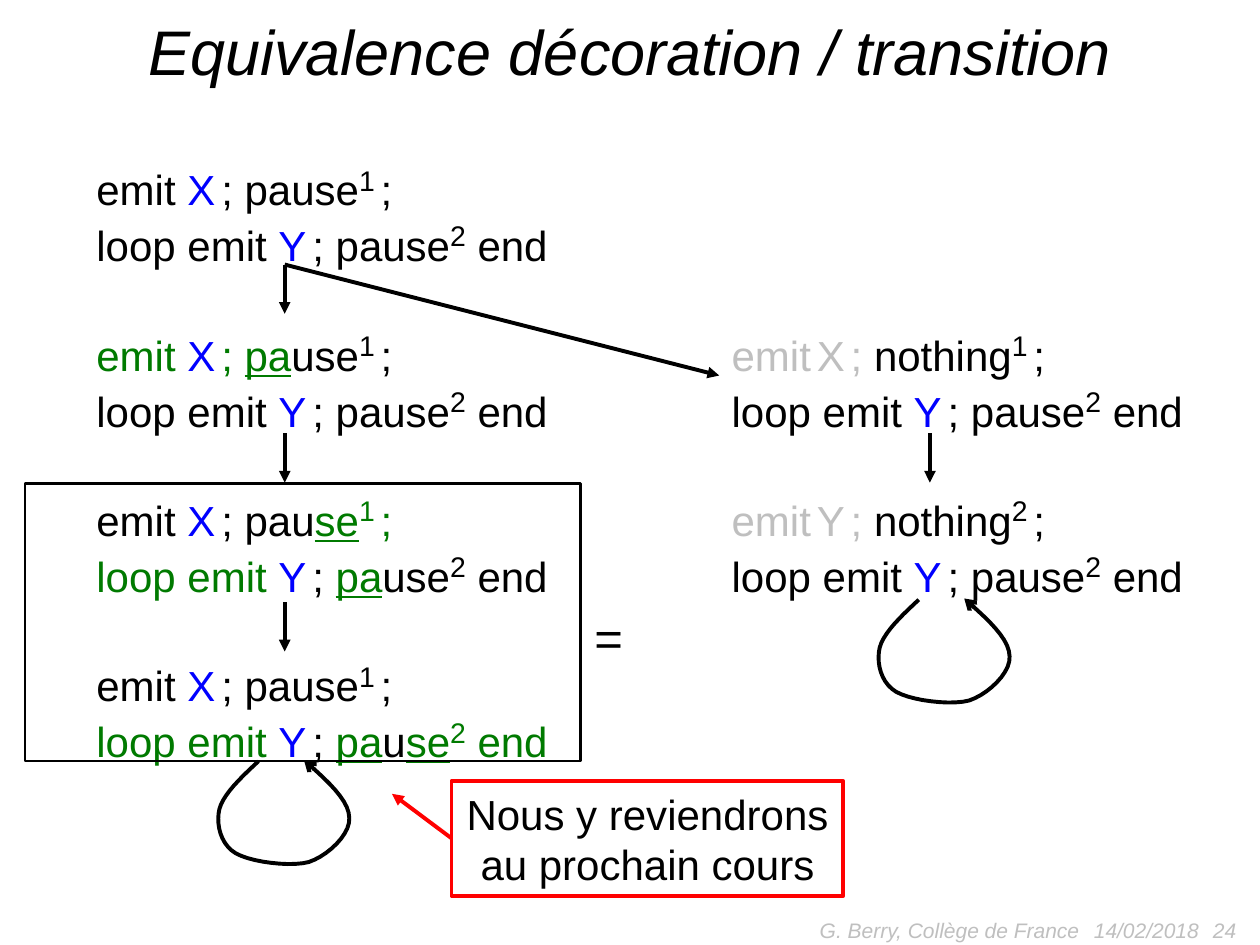
import dataclasses
import typing

import lxml.etree
import pptx
import pptx.dml.color
import pptx.enum.shapes
import pptx.enum.text
import pptx.oxml.ns
import pptx.util

Pt = pptx.util.Pt
Align = pptx.enum.text.PP_ALIGN
Anchor = pptx.enum.text.MSO_ANCHOR


@dataclasses.dataclass(frozen=True)
class Theme:
    font: str = "Arial"
    ink: str = "000000"
    signal: str = "0000FF"
    active: str = "007A00"
    faded: str = "BFBFBF"
    alert: str = "FF0000"
    title: float = 36
    code: float = 24
    index: float = 28
    small: float = 12
    stroke: float = 2.25
    frame: float = 1.5


THEME = Theme()


class Span(typing.NamedTuple):
    text: str
    color: str = THEME.ink
    size: float = THEME.code
    underline: bool = False
    raised: bool = False


class Box(typing.NamedTuple):
    left: float
    top: float
    width: float
    height: float


class Label(typing.NamedTuple):
    box: Box
    text: str
    size: float
    color: str = THEME.ink
    align: Align = Align.LEFT
    italic: bool = False
    anchor: Anchor = Anchor.TOP
    wrap: bool = True
    spacing: float = 1.0


class Program(typing.NamedTuple):
    column: int
    row: int
    lines: list[list[Span]]


class Arrow(typing.NamedTuple):
    start: tuple[float, float]
    end: tuple[float, float]
    color: str = THEME.ink


def rgb(color: str) -> pptx.dml.color.RGBColor:
    return pptx.dml.color.RGBColor.from_string(color)


def add_head(line: pptx.dml.line.LineFormat, kind: str) -> None:
    outline = line._get_or_add_ln()
    lxml.etree.SubElement(outline, pptx.oxml.ns.qn("a:tailEnd"), type=kind)


def set_line(line: pptx.dml.line.LineFormat, color: str, width: float) -> None:
    line.color.rgb = rgb(color)
    line.width = Pt(width)


def write_label(frame: pptx.text.text.TextFrame, label: Label) -> None:
    frame.word_wrap = label.wrap
    frame.vertical_anchor = label.anchor
    for number, text in enumerate(label.text.split("\n")):
        para = frame.add_paragraph() if number else frame.paragraphs[0]
        para.alignment = label.align
        para.line_spacing = label.spacing
        para.font.name = THEME.font
        para.font.size = Pt(label.size)
        para.font.italic = label.italic
        para.font.color.rgb = rgb(label.color)
        para.add_run().text = text


def draw_label(slide: pptx.slide.Slide, label: Label) -> None:
    box = slide.shapes.add_textbox(*map(Pt, label.box))
    write_label(box.text_frame, label)


def draw_program(slide: pptx.slide.Slide, program: Program) -> None:
    left, top = 48 + 363 * program.column, 88.5 + 94.5 * program.row
    frame = slide.shapes.add_textbox(Pt(left), Pt(top), Pt(276), Pt(62.5)).text_frame
    frame.word_wrap = False
    for number, line in enumerate(program.lines):
        para = frame.add_paragraph() if number else frame.paragraphs[0]
        para.line_spacing = 0.95
        para.font.name = THEME.font
        for span in line:
            run = para.add_run()
            run.text = span.text
            run.font.size = Pt(span.size)
            run.font.color.rgb = rgb(span.color)
            if span.underline:
                run.font.underline = True
            if span.raised:
                run._r.get_or_add_rPr().set("baseline", "30000")


def draw_arrow(slide: pptx.slide.Slide, arrow: Arrow) -> None:
    straight = pptx.enum.shapes.MSO_CONNECTOR.STRAIGHT
    connector = slide.shapes.add_connector(straight, *map(Pt, arrow.start + arrow.end))
    set_line(connector.line, arrow.color, THEME.stroke)
    add_head(connector.line, "triangle")
    lxml.etree.SubElement(connector._element.spPr, pptx.oxml.ns.qn("a:effectLst"))


def draw_frame(slide: pptx.slide.Slide, box: Box, color: str, width: float) -> pptx.shapes.autoshape.Shape:
    rectangle = pptx.enum.shapes.MSO_SHAPE.RECTANGLE
    shape = slide.shapes.add_shape(rectangle, *map(Pt, box))
    shape.shadow.inherit = False
    shape.fill.background()
    set_line(shape.line, color, width)
    return shape


LOOP_CURVE = [
    (23, 0.7), (13, 10), (3, 19.5), (0.7, 28), (-1.4, 36.7), (1.4, 48.2), (10, 53.3),
    (18.7, 58.3), (41, 61.2), (51.8, 58.3), (62.6, 54.7), (75.6, 42.5), (74.9, 33.1),
    (74.9, 23), (62, 11.5), (49, 0),
]


def curve_points(controls: list[tuple[float, float]], steps: int = 10) -> list[tuple[float, float]]:
    points = [controls[0]]
    for first in range(0, len(controls) - 1, 3):
        piece = controls[first:first + 4]
        for step in range(1, steps + 1):
            t = step / steps
            weights = ((1 - t) ** 3, 3 * t * (1 - t) ** 2, 3 * t ** 2 * (1 - t), t ** 3)
            x, y = (sum(w * p[axis] for w, p in zip(weights, piece)) for axis in (0, 1))
            points.append((x, y))
    return points


def draw_loop(slide: pptx.slide.Slide, left: float, top: float) -> None:
    points = [(Pt(left + x), Pt(top + y)) for x, y in curve_points(LOOP_CURVE)]
    builder = slide.shapes.build_freeform(*points[0])
    builder.add_line_segments(points[1:], close=False)
    shape = builder.convert_to_shape()
    shape.shadow.inherit = False
    shape.fill.background()
    set_line(shape.line, THEME.ink, THEME.stroke)
    add_head(shape.line, "arrow")


def marked(text: str) -> Span:
    return Span(text, THEME.active, underline=True)


def index(digit: str, color: str = THEME.ink) -> Span:
    return Span(digit, color, THEME.index, raised=True)


def emit(name: str, color: str = THEME.ink) -> list[Span]:
    return [Span("emit ", color), Span(name, THEME.signal), GAP]


def loop(color: str = THEME.ink) -> list[Span]:
    return [Span("loop ", color), Span("emit ", color), Span("Y", THEME.signal), GAP]


def faded_emit(name: str, digit: str) -> list[Span]:
    gap = GAP._replace(color=THEME.faded)
    before = [Span("emit", THEME.faded), gap, Span(name, THEME.faded), gap, Span("; ", THEME.faded)]
    return before + [Span("nothing"), index(digit)] + END


GAP = Span(" ", size=THEME.small)
END = [GAP, Span(";")]
PLAIN_EMIT = emit("X") + [Span("; pause"), index("1")] + END
PLAIN_LOOP = loop() + [Span("; pause"), index("2"), Span(" end")]
PROGRAMS = [
    Program(0, 0, [PLAIN_EMIT, PLAIN_LOOP]),
    Program(0, 1, [emit("X", THEME.active) + [Span("; ", THEME.active), marked("pa"), Span("use"), index("1")] + END,
                   PLAIN_LOOP]),
    Program(1, 1, [faded_emit("X", "1"), PLAIN_LOOP]),
    Program(0, 2, [emit("X") + [Span("; pau"), marked("se"), index("1", THEME.active), GAP, Span(";", THEME.active)],
                   loop(THEME.active) + [Span("; "), marked("pa"), Span("use"), index("2"), Span(" end")]]),
    Program(0, 3, [PLAIN_EMIT, loop(THEME.active) + [Span("; "), marked("pa"), Span("u"), marked("se"),
                                                     index("2", THEME.active), Span(" end", THEME.active)]]),
    Program(1, 2, [faded_emit("Y", "2"), PLAIN_LOOP]),
]
FOOTER = dict(size=THEME.small, color=THEME.faded, italic=True, anchor=Anchor.MIDDLE)
LABELS = [
    Label(Box(618, 517, 100, 29), "14/02/2018", **FOOTER),
    Label(Box(546, 517, 167.5, 29), "24", align=Align.RIGHT, **FOOTER),
    Label(Box(396, 517, 228, 29), "G. Berry, Collège de France", align=Align.RIGHT, **FOOTER),
    Label(Box(18, 3.6, 684, 51), "Equivalence décoration / transition", THEME.title, align=Align.CENTER, italic=True),
    Label(Box(332.6, 342, 31, 40), "=", THEME.index, wrap=False, spacing=1.05),
]
NOTE = Label(Box(258, 446.4, 224, 65.5), "Nous y reviendrons\nau prochain cours", THEME.code,
             align=Align.CENTER, anchor=Anchor.MIDDLE, wrap=False)
STEPS = [Arrow((x, 151.2 + 96.5 * row), (x, 179.3 + 96.5 * row))
         for x, row in ((162.7, 0), (162.7, 1), (162.7, 2), (531.4, 1))]
ARROWS = STEPS + [Arrow((162.7, 151.2), (411, 214.6)), Arrow((258, 479), (224, 453.6), THEME.alert)]


def main() -> None:
    deck = pptx.Presentation()
    deck.slide_width, deck.slide_height = Pt(720), Pt(540)
    slide = deck.slides.add_slide(deck.slide_layouts[6])
    for label in LABELS:
        draw_label(slide, label)
    for program in PROGRAMS:
        draw_program(slide, program)
    for arrow in ARROWS:
        draw_arrow(slide, arrow)
    for left, top in ((502, 342), (124.7, 434.3)):
        draw_loop(slide, left, top)
    note = draw_frame(slide, NOTE.box, THEME.alert, THEME.stroke)
    write_label(note.text_frame, NOTE)
    draw_frame(slide, Box(14.2, 276.5, 317.5, 158.4), THEME.ink, THEME.frame)
    deck.save("out.pptx")


if __name__ == "__main__":
    main()
